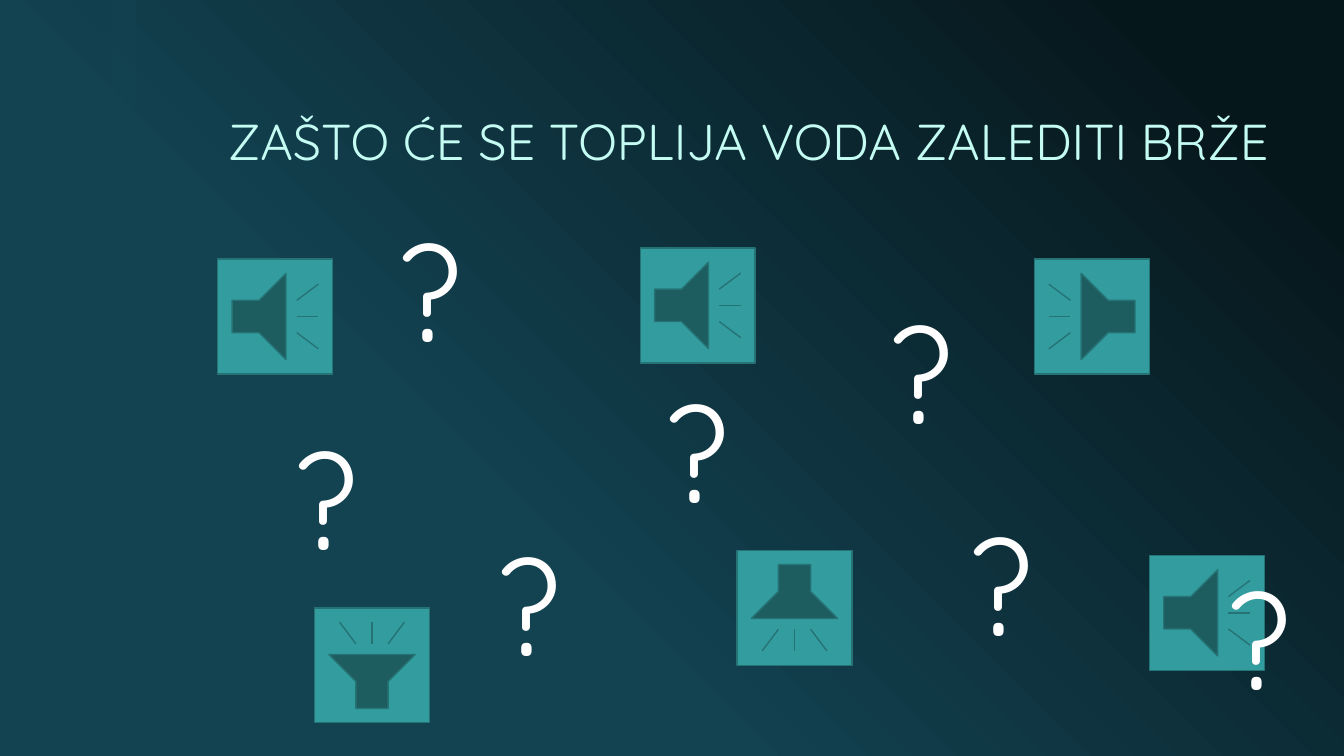
from lxml import etree
from pptx import Presentation
from pptx import util as u
from pptx.dml.color import RGBColor
from pptx.enum import shapes, text
from pptx.oxml.ns import qn

TITLE = "ZAŠTO ĆE SE TOPLIJA VODA ZALEDITI BRŽE"
# Sound buttons: left, top, rotation
BUTTONS = [(2.16, 2.57, 0), (10.26, 2.57, 180), (7.31, 5.46, 90),
           (3.12, 6.03, 270), (6.35, 2.46, 0), (11.4, 5.51, 0)]
# Question marks: left, top
QUESTIONS = [(3.83, 2.02), (6.48, 3.61), (4.82, 5.13), (8.7, 2.83),
             (9.5, 4.93), (12.06, 5.47), (2.8, 4.08)]
BUTTON_SIDE = 1.14
QUESTION_SIZE = (1, 1.72)

FONT = "Quicksand"
DARK = RGBColor(0x06, 0x17, 0x1C)
PETROL = RGBColor(0x13, 0x42, 0x51)
TEAL = RGBColor(0x33, 0x9C, 0x9F)
TEAL_LINE = RGBColor(0x26, 0x73, 0x76)
MINT = RGBColor(0xC4, 0xFB, 0xF2)
WHITE = RGBColor(0xFF, 0xFF, 0xFF)


def inches(*lengths):
    return [u.Inches(length) for length in lengths]


def write(tf, words, size, color, anchor=text.MSO_ANCHOR.TOP, spacing=None):
    tf.word_wrap = True
    tf.auto_size = text.MSO_AUTO_SIZE.NONE
    tf.vertical_anchor = anchor
    p = tf.paragraphs[0]
    p.alignment = text.PP_ALIGN.LEFT
    p.line_spacing = spacing
    r = p.add_run()
    r.text = words
    r.font.name = FONT
    r.font.size = u.Pt(size)
    r.font.color.rgb = color


def add_filled(s, kind, box, color):
    sp = s.shapes.add_shape(kind, *inches(*box))
    sp.shadow.inherit = False
    sp.fill.solid()
    sp.fill.fore_color.rgb = color
    return sp


prs = Presentation()
prs.slide_width, prs.slide_height = inches(13.33, 7.5)
s = prs.slides.add_slide(prs.slide_layouts[5])

# Background: dark top right corner fading to petrol
bg = s.background.fill
bg.gradient()
bg.gradient_angle = 225
for stop, color, position in zip(bg.gradient_stops, (DARK, PETROL), (0.1, 0.65)):
    stop.color.rgb = color
    stop.position = position

# Translucent side band
band = add_filled(s, shapes.MSO_SHAPE.RECTANGLE, (1.1, 0, 0.25, 7.5), PETROL)
band.line.fill.background()
band_color = band._element.spPr.find(qn("a:solidFill"))[0]
etree.SubElement(band_color, qn("a:alpha")).set("val", "60000")

# Title
title = s.shapes.title
title.left, title.top, title.width, title.height = inches(2.16, 0.42, 10.64, 1.33)
write(title.text_frame, TITLE, 36, MINT, anchor=text.MSO_ANCHOR.BOTTOM, spacing=0.9)

# Sound buttons
for left, top, rotation in BUTTONS:
    button = add_filled(s, shapes.MSO_SHAPE.ACTION_BUTTON_SOUND,
                        (left, top, BUTTON_SIDE, BUTTON_SIDE), TEAL)
    button.rotation = rotation
    button.line.color.rgb = TEAL_LINE
    button.line.width = u.Pt(1)

# Question marks
for left, top in QUESTIONS:
    mark = s.shapes.add_textbox(*inches(left, top, *QUESTION_SIZE))
    write(mark.text_frame, "?", 96, WHITE)

prs.save("out.pptx")
